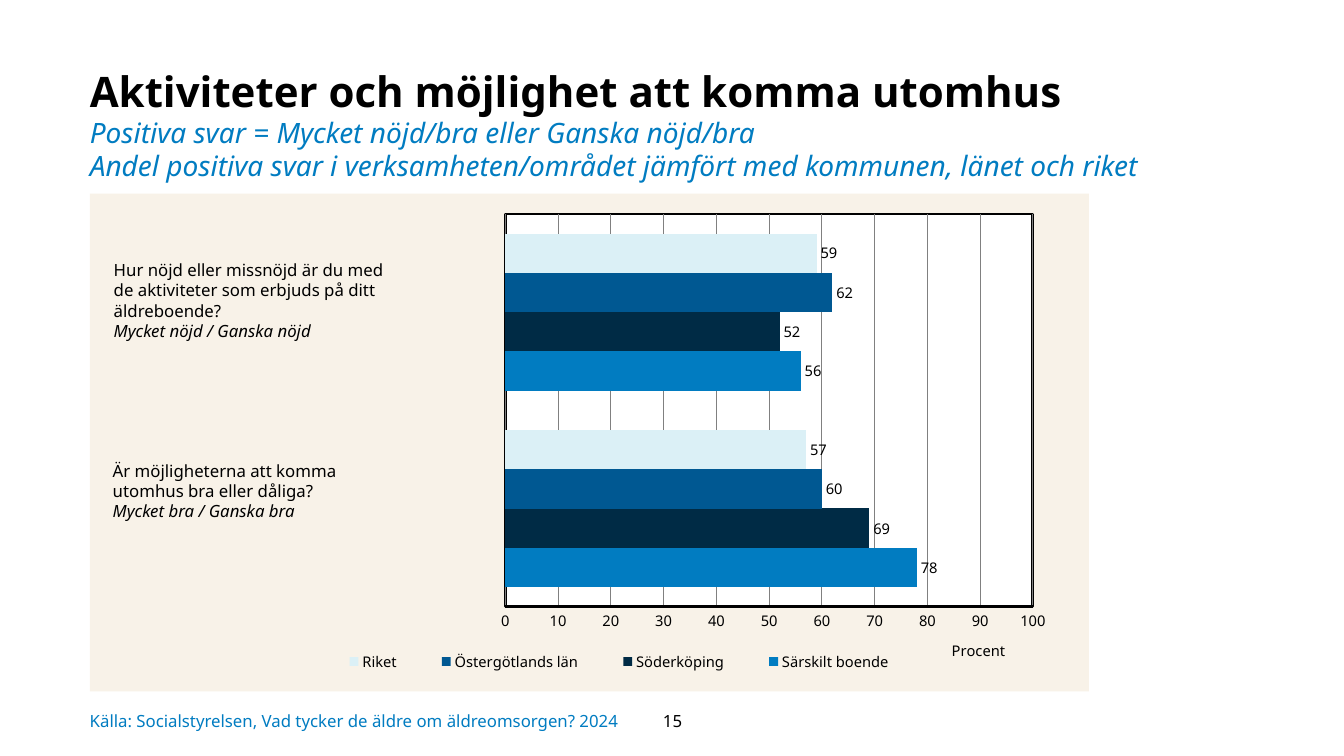
from lxml import etree
from pptx import Presentation
from pptx.chart.data import CategoryChartData
from pptx.dml.color import RGBColor
from pptx.enum.chart import (
    XL_CHART_TYPE as ChartType,
    XL_LABEL_POSITION as LabelPosition,
    XL_LEGEND_POSITION as LegendPosition,
    XL_TICK_MARK as TickMark,
)
from pptx.enum.text import MSO_ANCHOR as Anchor, MSO_AUTO_SIZE as AutoSize, PP_ALIGN as Align
from pptx.oxml import parse_xml
from pptx.oxml.ns import nsdecls, qn
from pptx.util import Inches, Pt

COLORS = {
    "text": "000000", "blue": "017CC1", "navy": "002B45", "ocean": "005892",
    "ice": "DBF0F6", "sand": "F8F2E8", "white": "FFFFFF", "grid": "808080",
}
SERIES = [
    ("Särskilt boende", (78, 56), "blue"),
    ("Söderköping", (69, 52), "navy"),
    ("Östergötlands län", (60, 62), "ocean"),
    ("Riket", (57, 59), "ice"),
]
QUESTIONS = [
    (1.03, 2.53, 1.09, "Hur nöjd eller missnöjd är du med de aktiviteter som erbjuds på ditt äldreboende?",
     "Mycket nöjd / Ganska nöjd"),
    (1.02, 4.52, 0.88, "Är möjligheterna att komma utomhus bra eller dåliga?",
     "Mycket bra / Ganska bra"),
]


class SurveySlide:
    """Holds the style and the slide, and adds each kind of element to it."""

    font_name = "Noto Sans"

    def __init__(self, presentation):
        self.slide = presentation.slides.add_slide(presentation.slide_layouts[5])

    def style(self, font, size, color="text", bold=False, italic=False):
        font.name = self.font_name
        font.size = Pt(size)
        font.bold = bold
        font.italic = italic
        font.color.rgb = RGBColor.from_string(COLORS[color])

    def title(self, heading, subtitles):
        shape = self.slide.shapes.title
        shape.left, shape.top = Inches(0.89), Inches(0.65)
        shape.width, shape.height = Inches(10.6), Inches(1.27)
        frame = shape.text_frame
        frame.text = "\v".join([heading, *subtitles])
        frame.word_wrap = True
        frame.auto_size = AutoSize.NONE
        frame.vertical_anchor = Anchor.TOP
        frame.margin_left = 0
        frame.margin_top = Inches(0.03)
        paragraph = frame.paragraphs[0]
        paragraph.alignment = Align.LEFT
        paragraph.line_spacing = 0.97
        first, *rest = paragraph.runs
        self.style(first.font, 30, bold=True)
        for run in rest:
            self.style(run.font, 20, "blue", italic=True)

    def text(self, left, top, width, height, lines, color="text"):
        shape = self.slide.shapes.add_textbox(Inches(left), Inches(top), Inches(width), Inches(height))
        frame = shape.text_frame
        frame.text = "\n".join(lines)
        frame.word_wrap = True
        for index, paragraph in enumerate(frame.paragraphs):
            self.style(paragraph.runs[0].font, 12, color, italic=index > 0)
        return frame

    def footer(self, left, width, line, color="text", alignment=Align.LEFT, margin=0.1):
        frame = self.text(left, 6.95, width, 0.4, [line], color)
        frame.vertical_anchor = Anchor.MIDDLE
        frame.margin_left = frame.margin_right = Inches(margin)
        frame.paragraphs[0].alignment = alignment

    def place(self, element, index, target="", **fractions):
        for old in element.findall(qn("c:layout")):
            element.remove(old)
        layout = parse_xml(f"<c:layout {nsdecls('c')}><c:manualLayout/></c:layout>")
        settings = {"layoutTarget": target} if target else {}
        settings.update(xMode="edge", yMode="edge", **fractions)
        for name, value in settings.items():
            etree.SubElement(layout[0], qn(f"c:{name}")).set("val", str(value))
        element.insert(index, layout)

    def area(self, fill, line=None):
        outline = (f'<a:ln w="25400"><a:solidFill><a:srgbClr val="{COLORS[line]}"/></a:solidFill></a:ln>'
                   if line else "<a:ln><a:noFill/></a:ln>")
        return parse_xml(f"<c:spPr {nsdecls('c', 'a')}><a:solidFill>"
                         f'<a:srgbClr val="{COLORS[fill]}"/></a:solidFill>{outline}</c:spPr>')

    def chart(self, left, top, width, height, series_rows):
        data = CategoryChartData()
        data.categories = ["1", "2"]
        for name, values, _ in series_rows:
            data.add_series(name, values)
        chart = self.slide.shapes.add_chart(
            ChartType.BAR_CLUSTERED, Inches(left), Inches(top), Inches(width), Inches(height), data
        ).chart
        chart.has_title = False
        self.style(chart.font, 10.5)
        plot = chart.plots[0]
        plot.gap_width = 100
        plot.overlap = 0
        plot.vary_by_categories = False
        for series, (_, _, color) in zip(plot.series, series_rows):
            series.format.fill.solid()
            series.format.fill.fore_color.rgb = RGBColor.from_string(COLORS[color])
            labels = series.data_labels
            labels.show_value = True
            labels.position = LabelPosition.OUTSIDE_END
            self.style(labels.font, 10.5)

        chart.category_axis.visible = False
        axis = chart.value_axis
        axis.minimum_scale, axis.maximum_scale, axis.major_unit = 0, 100, 10
        axis.major_tick_mark = axis.minor_tick_mark = TickMark.NONE
        axis.format.line.width = Pt(2)
        axis.format.line.color.rgb = RGBColor.from_string(COLORS["text"])
        axis.major_gridlines.format.line.width = Pt(0.75)
        axis.major_gridlines.format.line.color.rgb = RGBColor.from_string(COLORS["grid"])
        self.style(axis.tick_labels.font, 10.5)
        axis.axis_title.text_frame.text = "Procent"
        self.style(axis.axis_title.text_frame.paragraphs[0].runs[0].font, 10.5)
        self.place(axis.axis_title._element, 1, x=0.86, y=0.89)

        chart.has_legend = True
        chart.legend.position = LegendPosition.BOTTOM
        chart.legend.include_in_layout = False
        self.style(chart.legend.font, 10.5)
        self.place(chart.legend._element, 1, x=0.22, y=0.91, w=0.62, h=0.06)

        chart_element = chart._chartSpace.find(qn("c:chart"))
        plot_area = chart_element.find(qn("c:plotArea"))
        self.place(plot_area, 0, "inner", x=0.416, y=0.041, w=0.528, h=0.789)
        plot_area.append(self.area("white", "text"))
        chart_element.addnext(self.area("sand"))


def main():
    presentation = Presentation()
    presentation.slide_width, presentation.slide_height = Inches(13.33), Inches(7.5)
    survey = SurveySlide(presentation)
    survey.title("Aktiviteter och möjlighet att komma utomhus", [
        "Positiva svar = Mycket nöjd/bra eller Ganska nöjd/bra",
        "Andel positiva svar i verksamheten/området jämfört med kommunen, länet och riket",
    ])
    survey.chart(0.89, 1.92, 9.91, 4.94, SERIES)
    for left, top, height, question, answers in QUESTIONS:
        survey.text(left, top, 3, height, [question, answers])
    survey.footer(0.89, 8.97, "Källa: Socialstyrelsen, Vad tycker de äldre om äldreomsorgen? 2024", "blue", margin=0)
    survey.footer(6.16, 1.02, "15", alignment=Align.CENTER)
    presentation.save("out.pptx")


if __name__ == "__main__":
    main()
